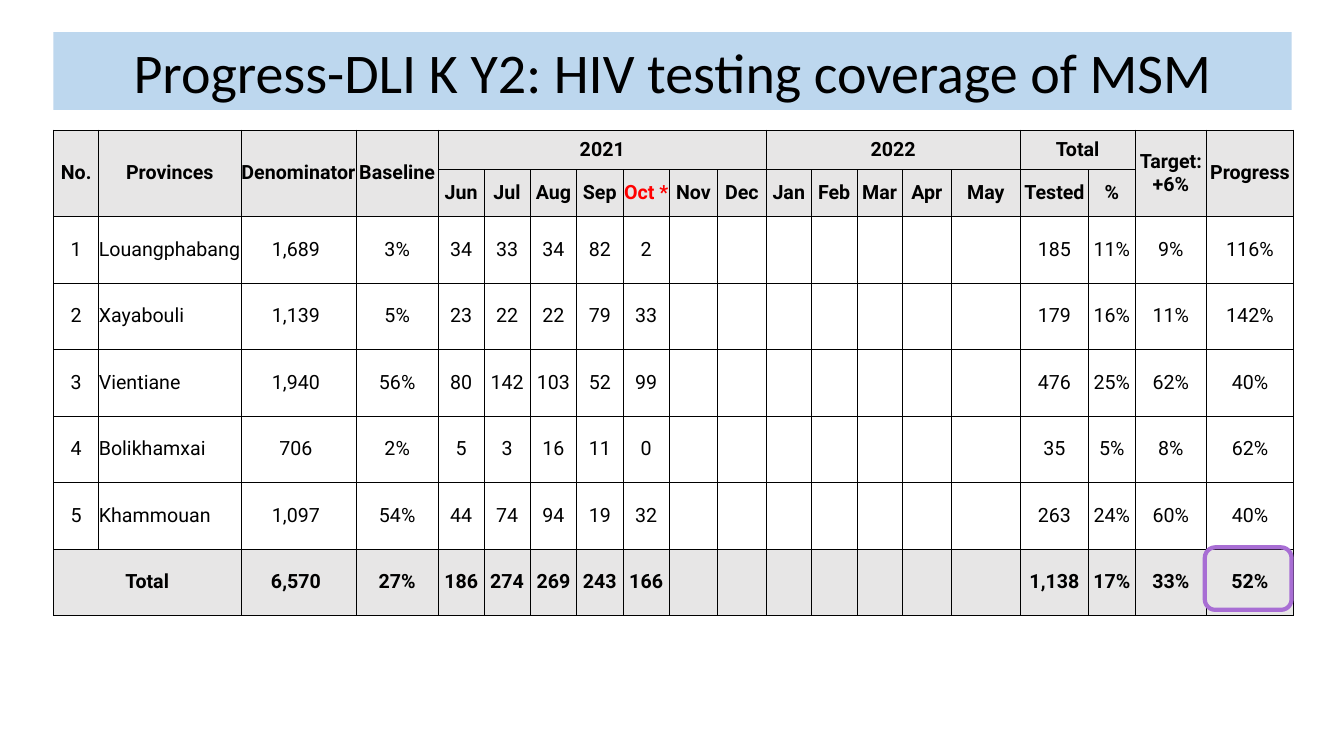
"""Build the slide on HIV testing progress by province."""
from dataclasses import dataclass

from lxml.etree import SubElement
from pptx import Presentation
from pptx.dml.color import RGBColor
from pptx.enum.shapes import MSO_SHAPE as Shape
from pptx.enum.text import MSO_ANCHOR as Anchor, MSO_AUTO_SIZE as AutoSize, PP_ALIGN as Align
from pptx.oxml.ns import qn
from pptx.slide import Slide
from pptx.table import _Cell as Cell
from pptx.text.text import TextFrame
from pptx.util import Inches, Pt

BLACK = RGBColor(0x00, 0x00, 0x00)
RED = RGBColor(0xFF, 0x00, 0x00)
GREY = RGBColor(0xE7, 0xE6, 0xE6)
LIGHT_BLUE = RGBColor(0xBD, 0xD7, 0xEE)
PURPLE = RGBColor(0xA8, 0x6E, 0xD4)

LEFT, WIDTH = 0.53, 12.28
COLUMN_WIDTHS = [0.45, 1.41, 1.14, 0.82, 0.45, *[0.46] * 4, 0.48, 0.48,
                 *[0.45] * 3, 0.49, 0.68, 0.68, 0.46, 0.71, 0.86]
ROW_HEIGHTS = [0.39, 0.41, *[0.66] * 6]
FIRST_MONTH, FIRST_RESULT = 4, 16
SUBHEADINGS = ["Jun", "Jul", "Aug", "Sep", "Oct *", "Nov", "Dec", "Jan", "Feb",
               "Mar", "Apr", "May", "Tested", "%"]


@dataclass
class Heading:
    """A heading cell that spans several rows or columns."""
    text: str
    column: int
    rows: int = 1
    columns: int = 1


@dataclass
class Record:
    """One body row: labels, monthly counts and results."""
    labels: list[str]
    months: list[str]
    results: list[str]
    total: bool = False


HEADINGS = [
    Heading("No.", 0, rows=2),
    Heading("Provinces", 1, rows=2),
    Heading("Denominator", 2, rows=2),
    Heading("Baseline", 3, rows=2),
    Heading("2021", 4, columns=7),
    Heading("2022", 11, columns=5),
    Heading("Total", 16, columns=2),
    Heading("Target:\n+6%", 18, rows=2),
    Heading("Progress", 19, rows=2),
]
RECORDS = [
    Record(["1", "Louangphabang", "1,689 ", "3%"], ["34", "33", "34", "82", "2"],
           ["185", "11%", "9%", "116%"]),
    Record(["2", "Xayabouli", "1,139 ", "5%"], ["23", "22", "22", "79", "33"],
           ["179", "16%", "11%", "142%"]),
    Record(["3", "Vientiane", "1,940 ", "56%"], ["80", "142", "103", "52", "99"],
           ["476", "25%", "62%", "40%"]),
    Record(["4", "Bolikhamxai", "706 ", "2%"], ["5", "3", "16", "11", "0"],
           ["35", "5%", "8%", "62%"]),
    Record(["5", "Khammouan", "1,097 ", "54%"], ["44", "74", "94", "19", "32"],
           ["263", "24%", "60%", "40%"]),
    Record(["Total", "", "6,570 ", "27%"], ["186", "274", "269", "243", "166"],
           ["1,138", "17%", "33%", "52%"], total=True),
]


def write(frame: TextFrame, text: str, *, size: float = 14, font: str = "Roboto",
          color: RGBColor = BLACK, bold: bool = False, align: Align = Align.CENTER) -> None:
    """Put formatted text into a text frame."""
    para = frame.paragraphs[0]
    para.text = text
    para.alignment = align
    for span in para.runs:
        span.font.size = Pt(size)
        span.font.name = font
        span.font.bold = bold
        span.font.color.rgb = color
    for line_break in para._p.findall(qn("a:br")):
        SubElement(line_break, qn("a:rPr"), sz=str(round(size * 100)))


def style_cell(cell: Cell, shaded: bool) -> None:
    """Give a cell its borders, fill, margins and anchor."""
    properties = cell._tc.get_or_add_tcPr()
    for side in ("a:lnL", "a:lnR", "a:lnT", "a:lnB"):
        line = SubElement(properties, qn(side), w=str(Pt(0.5)))
        SubElement(SubElement(line, qn("a:solidFill")), qn("a:srgbClr"), val=str(BLACK))
    if shaded:
        cell.fill.solid()
        cell.fill.fore_color.rgb = GREY
    else:
        cell.fill.background()
    cell.margin_left = cell.margin_right = cell.margin_top = cell.margin_bottom = 0
    cell.vertical_anchor = Anchor.MIDDLE


def add_title(page: Slide) -> None:
    """Draw the title band."""
    box = page.shapes.add_shape(Shape.RECTANGLE, Inches(LEFT), Inches(0.32),
                                Inches(WIDTH), Inches(0.77))
    box.shadow.inherit = False
    box.fill.solid()
    box.fill.fore_color.rgb = LIGHT_BLUE
    box.line.fill.background()
    frame = box.text_frame
    frame.word_wrap = True
    frame.auto_size = AutoSize.SHAPE_TO_FIT_TEXT
    frame.vertical_anchor = Anchor.MIDDLE
    write(frame, "Progress-DLI K Y2: HIV testing coverage of MSM", size=40, font="Calibri")


def add_progress_table(page: Slide) -> None:
    """Draw the table of monthly tests by province."""
    table = page.shapes.add_table(len(ROW_HEIGHTS), len(COLUMN_WIDTHS), Inches(LEFT),
                                  Inches(1.29), Inches(WIDTH), Inches(4.76)).table
    table.first_row = table.horz_banding = False
    for column, width in zip(table.columns, COLUMN_WIDTHS):
        column.width = Inches(width)
    for row, height in zip(table.rows, ROW_HEIGHTS):
        row.height = Inches(height)
    last_row = len(ROW_HEIGHTS) - 1
    for number, row in enumerate(table.rows):
        for cell in row.cells:
            style_cell(cell, shaded=number < 2 or number == last_row)

    for heading in HEADINGS:
        cell = table.cell(0, heading.column)
        cell.merge(table.cell(heading.rows - 1, heading.column + heading.columns - 1))
        write(cell.text_frame, heading.text, bold=True)
    for column, text in enumerate(SUBHEADINGS, FIRST_MONTH):
        write(table.cell(1, column).text_frame, text, bold=True,
              color=RED if "*" in text else BLACK)

    table.cell(last_row, 0).merge(table.cell(last_row, 1))
    for row, record in enumerate(RECORDS, 2):
        groups = [(0, record.labels), (FIRST_MONTH, record.months),
                  (FIRST_RESULT, record.results)]
        for start, texts in groups:
            for column, text in enumerate(texts, start):
                if text:
                    write(table.cell(row, column).text_frame, text, bold=record.total,
                          align=Align.LEFT if column == 1 else Align.CENTER)


def add_highlight(page: Slide) -> None:
    """Frame the total progress."""
    box = page.shapes.add_shape(Shape.ROUNDED_RECTANGLE, Inches(11.95), Inches(5.43),
                                Inches(0.86), Inches(0.62))
    box.shadow.inherit = False
    box.fill.background()
    box.line.color.rgb = PURPLE
    box.line.width = Pt(3)


def main() -> None:
    """Build and save the deck."""
    deck = Presentation()
    deck.slide_width, deck.slide_height = Inches(13.33), Inches(7.5)
    page = deck.slides.add_slide(deck.slide_layouts[6])
    add_title(page)
    add_progress_table(page)
    add_highlight(page)
    deck.save("out.pptx")


if __name__ == "__main__":
    main()
